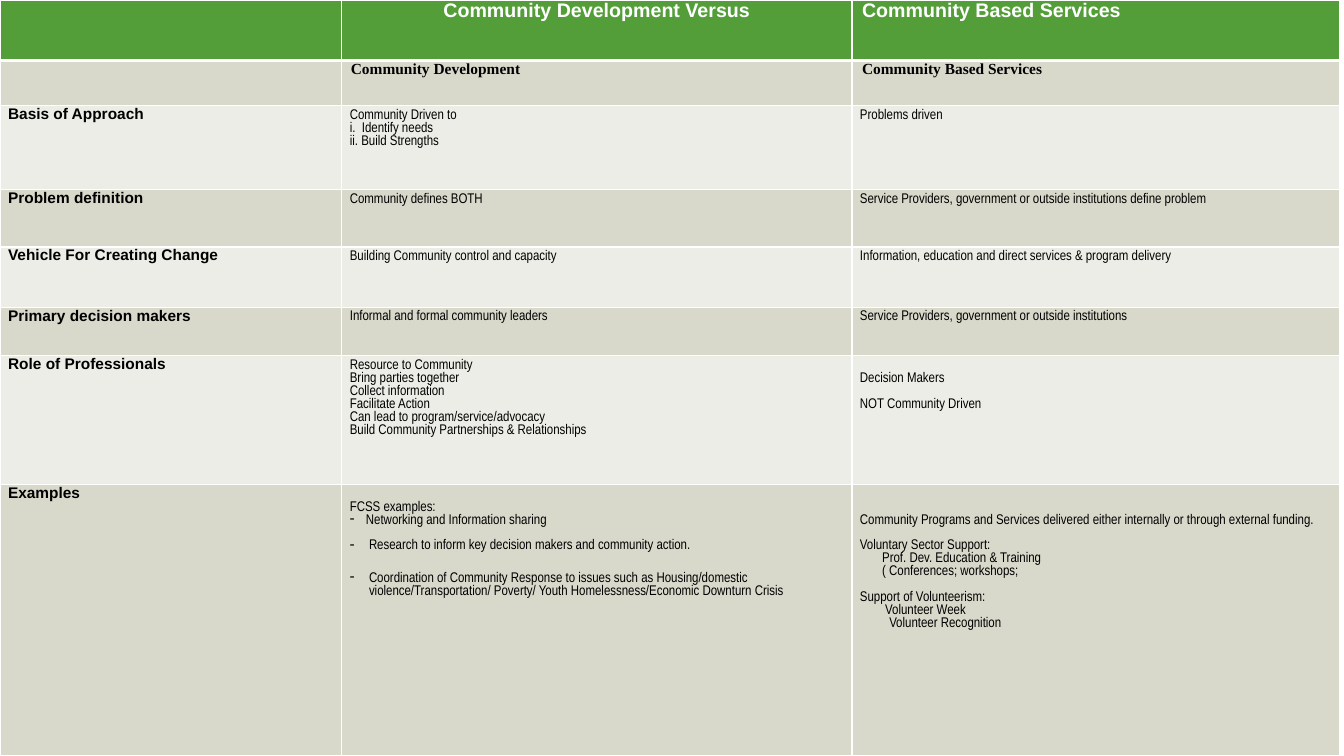
from dataclasses import dataclass

from lxml import etree
from pptx import Presentation
from pptx import util as u
from pptx.dml.color import RGBColor
from pptx.enum import text
from pptx.oxml.ns import qn

LINE = 9.2  # points from one body line to the next
HEADROOM = 2.5  # points that keep the first body line inside its cell
COLUMNS = [3.39, 5.06, 4.84]
ROWS = [0.6, 0.45, 0.83, 0.57, 0.6, 0.48, 1.28, 2.69]


def colour(hex_string):
    return RGBColor.from_string(hex_string)


@dataclass
class Entry:
    """One paragraph of a cell; gap is the space above it, in body lines."""
    words: str
    gap: float = 0
    indent: float = 0
    bullet: bool = False


TOPICS = [
    ("Basis of Approach",
     [Entry("Community Driven to"), Entry("i.  Identify needs"), Entry("ii. Build Strengths")],
     [Entry("Problems driven")]),
    ("Problem definition",
     [Entry("Community defines BOTH")],
     [Entry("Service Providers, government or outside institutions define problem")]),
    ("Vehicle For Creating Change",
     [Entry("Building Community control and capacity")],
     [Entry("Information, education and direct services & program delivery")]),
    ("Primary decision makers",
     [Entry("Informal and formal community leaders")],
     [Entry("Service Providers, government or outside institutions")]),
    ("Role of Professionals",
     [Entry("Resource to Community"), Entry("Bring parties together"),
      Entry("Collect information"), Entry("Facilitate Action"),
      Entry("Can lead to program/service/advocacy"),
      Entry("Build Community Partnerships & Relationships")],
     [Entry("Decision Makers", 1), Entry("NOT Community Driven", 1)]),
    ("Examples",
     [Entry("FCSS examples:", 1),
      Entry("Networking and Information sharing", 0, 0.16, True),
      Entry("Research to inform key decision makers and community action.", 1, 0.19, True),
      Entry("Coordination of Community Response to issues such as Housing/domestic "
            "violence/Transportation/ Poverty/ Youth Homelessness/Economic Downturn Crisis",
            1.5, 0.19, True)],
     [Entry("Community Programs and Services delivered either internally or through "
            "external funding.", 2),
      Entry("Voluntary Sector Support:", 1),
      Entry("Prof. Dev. Education & Training", 0, 0.22),
      Entry("( Conferences; workshops;", 0, 0.22),
      Entry("Support of Volunteerism:", 1),
      Entry("Volunteer Week", 0, 0.25),
      Entry("Volunteer Recognition", 0, 0.29)]),
]


class ComparisonPage:
    green, dark_band, light_band = "549E39", "D8D8CB", "EDEDE7"
    white, black = "FFFFFF", "000000"

    def __init__(self, deck):
        self.page = deck.slides.add_slide(deck.slide_layouts[6])

    def add_grid(self, columns, rows):
        frame = self.page.shapes.add_table(
            len(rows), len(columns), 0, 0, u.Inches(sum(columns)), u.Inches(sum(rows)))
        self.table = frame.table
        self.table.first_row = self.table.horz_banding = False
        for column, width in zip(self.table.columns, columns):
            column.width = u.Inches(width)
        for index, (row, height) in enumerate(zip(self.table.rows, rows)):
            row.height = u.Inches(height)
            band = self.light_band if index % 2 == 0 else self.dark_band
            for cell in row.cells:
                cell.fill.solid()
                cell.fill.fore_color.rgb = colour(band if index else self.green)
                cell.margin_left = cell.margin_right = u.Inches(0.08)
                cell.margin_top = cell.margin_bottom = 0
                self.add_borders(cell, top=3 if index == 1 else 1, bottom=1 if index else 3)

    def add_borders(self, cell, top, bottom):
        properties = cell._tc.get_or_add_tcPr()
        sides = [("a:lnL", 1), ("a:lnR", 1), ("a:lnT", top), ("a:lnB", bottom)]
        for place, (tag, points) in enumerate(sides):
            line = etree.Element(qn(tag), w=str(u.Pt(points)))
            fill = etree.SubElement(line, qn("a:solidFill"))
            etree.SubElement(fill, qn("a:srgbClr"), val=self.white)
            properties.insert(place, line)

    def format_runs(self, para, font, size, bold, shade):
        for span in para.runs:
            span.font.name = font
            span.font.size = u.Pt(size)
            span.font.bold = bold
            span.font.color.rgb = colour(shade)

    def add_heading(self, row, column, words, font="Arial", size=11, shade=black,
                    indent=0, align=text.PP_ALIGN.LEFT):
        para = self.table.cell(row, column).text_frame.paragraphs[0]
        para.text = words
        para.alignment = align
        para._p.get_or_add_pPr().set("marL", str(u.Inches(indent)))
        self.format_runs(para, font, size, True, shade)

    def add_entries(self, row, column, entries):
        cell = self.table.cell(row, column)
        cell.margin_top = u.Pt(HEADROOM + entries[0].gap * LINE)
        frame = cell.text_frame
        frame.text = "\n".join(entry.words for entry in entries)
        for index, (para, entry) in enumerate(zip(frame.paragraphs, entries)):
            para.line_spacing = 1.0
            para.space_before = u.Pt(entry.gap * LINE if index else 0)
            properties = para._p.get_or_add_pPr()
            properties.set("marL", str(u.Inches(entry.indent)))
            if entry.bullet:
                properties.set("indent", str(u.Inches(-entry.indent)))
                etree.SubElement(properties, qn("a:buChar"), char="-")
            self.format_runs(para, "Arial Narrow", 10, False, self.black)


def main():
    deck = Presentation()
    deck.slide_width, deck.slide_height = u.Inches(13.33), u.Inches(7.5)
    page = ComparisonPage(deck)
    page.add_grid(COLUMNS, ROWS)
    page.add_heading(0, 1, "Community Development Versus", size=14, shade=page.white,
                     align=text.PP_ALIGN.CENTER)
    page.add_heading(0, 2, "Community Based Services", size=14, shade=page.white, indent=0.02)
    page.add_heading(1, 1, "Community Development", "Times New Roman", indent=0.01)
    page.add_heading(1, 2, "Community Based Services", "Times New Roman", indent=0.02)
    for row, (topic, development, services) in enumerate(TOPICS, start=2):
        page.add_heading(row, 0, topic)
        page.add_entries(row, 1, development)
        page.add_entries(row, 2, services)
    deck.save("out.pptx")


if __name__ == "__main__":
    main()
